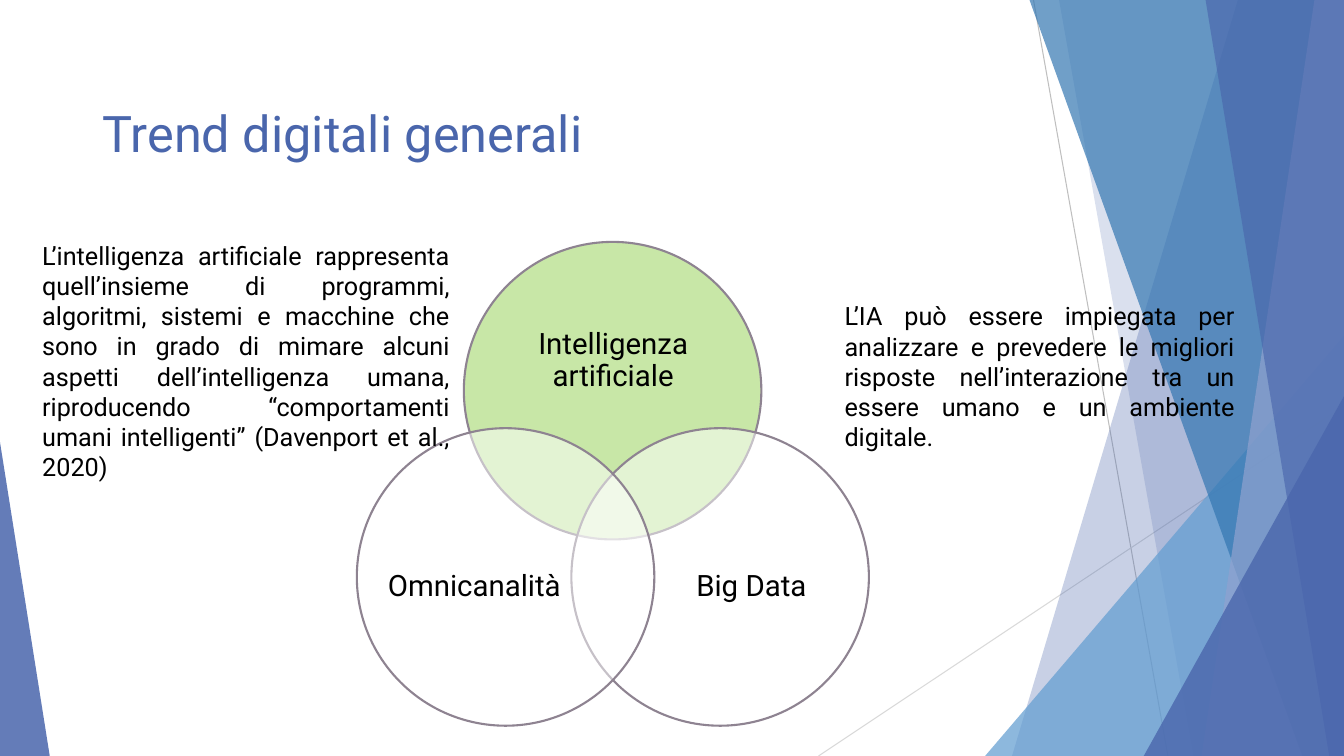
from lxml import etree
from pptx import Presentation
from pptx.dml.color import RGBColor
from pptx.enum.shapes import MSO_CONNECTOR, MSO_SHAPE
from pptx.enum.text import MSO_ANCHOR, PP_ALIGN
from pptx.oxml.ns import qn
from pptx.util import Inches, Pt

STRAIGHT = MSO_CONNECTOR.STRAIGHT
TRIANGLE, OVAL = MSO_SHAPE.ISOSCELES_TRIANGLE, MSO_SHAPE.OVAL
LEFT, CENTER, JUSTIFY = PP_ALIGN.LEFT, PP_ALIGN.CENTER, PP_ALIGN.JUSTIFY
TOP, MIDDLE = MSO_ANCHOR.TOP, MSO_ANCHOR.MIDDLE

SLIDE = (0, 0, 13.33, 7.5)
FONT = "Roboto"
BLUE, BLACK, WHITE = "4A66AC", "000000", "FFFFFF"
GREEN, OUTLINE = "92D050", "8E8391"


def color(hex_code):
    return RGBColor.from_string(hex_code)


def inside(box, left, top, width, height):
    """Return the part of a box given in percent of its size."""
    x, y, w, h = box
    return (x + w * left / 100, y + h * top / 100,
            w * width / 100, h * height / 100)


def emu(box):
    return [Inches(v) for v in box]


def paint(sp, fill, opacity, line=None, width=1.5):
    sp.shadow.inherit = False
    sp.fill.solid()
    sp.fill.fore_color.rgb = color(fill)
    clr = sp.fill._xPr.find(qn("a:solidFill"))[0]
    etree.SubElement(clr, qn("a:alpha"), val=str(opacity * 1000))
    if line:
        sp.line.color.rgb = color(line)
        sp.line.width = Pt(width)
    else:
        sp.line.fill.background()


def add_text(slide, box, text, size=18, hue=BLACK, align=LEFT,
             anchor=TOP, spacing=None, inset=None):
    tf = slide.shapes.add_textbox(*emu(box)).text_frame
    tf.word_wrap = True
    tf.vertical_anchor = anchor
    if inset is not None:
        tf.margin_left = tf.margin_right = Inches(inset)
        tf.margin_top = tf.margin_bottom = Inches(inset)
    p = tf.paragraphs[0]
    p.alignment = align
    p.line_spacing = spacing
    r = p.add_run()
    r.text = text
    r.font.name, r.font.size = FONT, Pt(size)
    r.font.color.rgb = color(hue)


def add_line(slide, box, start, end, hue):
    x, y, w, h = box
    points = [v for px, py in (start, end)
              for v in (Inches(x + w * px / 100), Inches(y + h * py / 100))]
    line = slide.shapes.add_connector(STRAIGHT, *points)
    line.line.color.rgb = color(hue)
    line.line.width = Pt(0.75)
    etree.SubElement(line._element.spPr, qn("a:effectLst"))


def add_facet(slide, box, top, bottom, fill, opacity):
    """Band from a slanted left edge to the right edge of the box."""
    x, y, w, h = box
    corners = [(x + w * px / 100, y + h * py / 100)
               for px, py in ((top, 0), (100, 0), (100, 100), (bottom, 100))]
    points = [(Inches(px), Inches(py)) for px, py in corners]
    builder = slide.shapes.build_freeform(*points[0])
    builder.add_line_segments(points[1:], close=True)
    paint(builder.convert_to_shape(), fill, opacity)


def add_triangle(slide, box, left, top, width, apex, fill, opacity):
    """Triangle that stands on the bottom edge of the box."""
    part = inside(box, left, top, width, 100 - top)
    sp = slide.shapes.add_shape(TRIANGLE, *emu(part))
    sp.adjustments[0] = apex
    paint(sp, fill, opacity)


def draw_backdrop(slide, box):
    add_line(slide, box, (76.9, 0), (86.9, 100), "BFBFBF")
    add_line(slide, box, (100, 53.7), (60.9, 100), "D9D9D9")
    add_facet(slide, box, 92.1, 75.3, BLUE, 30)
    add_facet(slide, box, 78.8, 88.8, BLUE, 20)
    add_triangle(slide, box, 73.3, 44.4, 26.7, 1, "629DD1", 72)
    add_facet(slide, box, 76.6, 96.9, "3477B2", 70)
    add_facet(slide, box, 97.8, 89.4, "90A2CF", 70)
    add_facet(slide, box, 89.7, 98.9, BLUE, 65)
    add_triangle(slide, box, 85.1, 52.4, 14.9, 1, BLUE, 80)
    add_triangle(slide, box, 0, 58.5, 3.7, 0, BLUE, 85)


def draw_venn(slide, box):
    # Circle corner in the box, fill, label, label area in the circle
    circles = [
        (20.9, 0, GREEN, "Intelligenza artificiale", (13.6, 17.6, 73.2, 45)),
        (41.9, 38.5, WHITE, "Big Data", (30.5, 25.8, 60, 55)),
        (0, 38.5, WHITE, "Omnicanalità", (9.5, 25.8, 60, 55)),
    ]
    for left, top, fill, label, area in circles:
        circle = inside(box, left, top, 58.1, 61.5)
        paint(slide.shapes.add_shape(OVAL, *emu(circle)), fill, 50, OUTLINE)
        add_text(slide, inside(circle, *area), label, size=21, align=CENTER,
                 anchor=MIDDLE, spacing=0.9, inset=0)


def draw_texts(slide, box):
    add_text(slide, inside(box, 62.1, 39.1, 30.5, 21.6),
             "L’IA può essere impiegata per analizzare e prevedere le migliori "
             "risposte nell’interazione tra un essere umano e un ambiente "
             "digitale.", align=JUSTIFY)
    add_text(slide, inside(box, 2.4, 31.1, 31.8, 37.7),
             "L’intelligenza artificiale rappresenta quell’insieme di "
             "programmi, algoritmi, sistemi e macchine che sono in grado di "
             "mimare alcuni aspetti dell’intelligenza umana, riproducendo "
             "“comportamenti umani intelligenti” (Davenport et al., 2020)",
             align=JUSTIFY)
    add_text(slide, inside(box, 6.9, 12.8, 80.6, 19.3),
             "Trend digitali generali", size=36, hue=BLUE)


def main():
    prs = Presentation()
    prs.slide_width, prs.slide_height = Inches(SLIDE[2]), Inches(SLIDE[3])
    slide = prs.slides.add_slide(prs.slide_layouts[6])
    draw_backdrop(slide, SLIDE)
    draw_venn(slide, inside(SLIDE, 26.55, 32, 38.1, 64))
    draw_texts(slide, SLIDE)
    prs.save("out.pptx")


if __name__ == "__main__":
    main()
